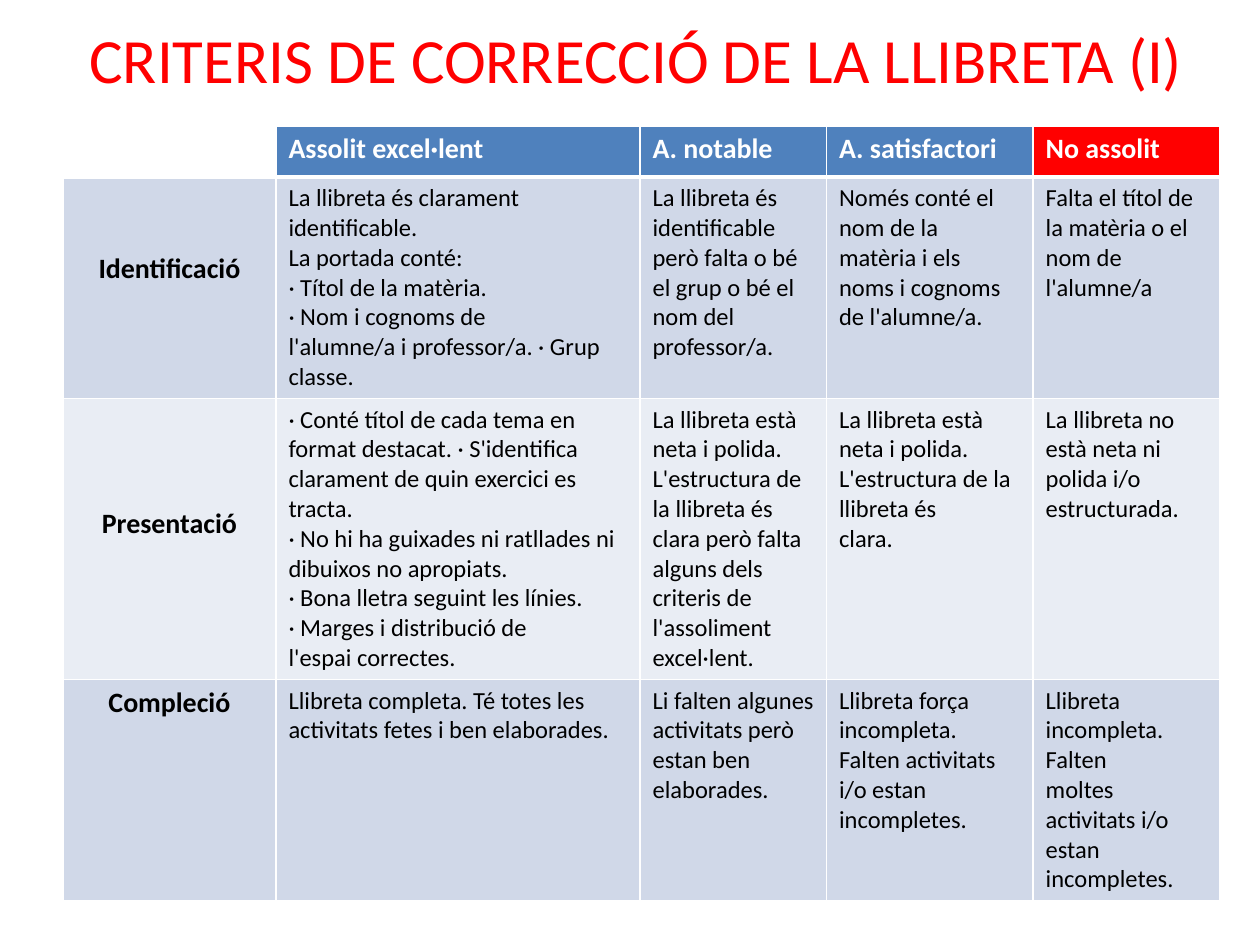
import pptx
import pptx.dml.color
import pptx.enum.text
import pptx.oxml
import pptx.oxml.ns
import pptx.util

Inches = pptx.util.Inches
Pt = pptx.util.Pt
ALIGN = pptx.enum.text.PP_ALIGN
ANCHOR = pptx.enum.text.MSO_ANCHOR

COLS = [1.69, 2.89, 1.48, 1.64, 1.48]
ROWS = [0.37, 1.74, 2.23, 1.75]
LINE = 0.27  # height of one label line
HEADS = ["Assolit excel·lent", "A. notable", "A. satisfactori", "No assolit"]

# Label, lines it is moved down, row fill, one text per level
BODY = [
    ("Identificació", 2, "D0D8E8", [
        "La llibreta és clarament\nidentificable.\nLa portada conté:\n"
        "· Títol de la matèria.\n· Nom i cognoms de\n"
        "l'alumne/a i professor/a. · Grup classe.",
        "La llibreta és identificable però falta o bé el grup o bé el nom del\n"
        "professor/a.",
        "Només conté el nom de la\nmatèria i els noms i cognoms\nde l'alumne/a.",
        "Falta el títol de la matèria o el\nnom de l'alumne/a",
    ]),
    ("Presentació", 3, "E9EDF4", [
        "· Conté títol de cada tema en format destacat. "
        "· S'identifica clarament de quin exercici es tracta.\n"
        "· No hi ha guixades ni ratllades ni dibuixos no apropiats.\n"
        "· Bona lletra seguint les línies.\n"
        "· Marges i distribució de\nl'espai correctes.",
        "La llibreta està neta i polida.\n"
        "L'estructura de la llibreta és clara però falta alguns dels criteris "
        "de l'assoliment\nexcel·lent.",
        "La llibreta està neta i polida.\nL'estructura de la llibreta és\nclara.",
        "La llibreta no està neta ni\npolida i/o estructurada.",
    ]),
    ("Compleció", 0, "D0D8E8", [
        "Llibreta completa. Té totes les activitats fetes i ben elaborades.",
        "Li falten algunes activitats però\nestan ben elaborades.",
        "Llibreta força incompleta.\nFalten activitats i/o estan incompletes.",
        "Llibreta incompleta. Falten\nmoltes activitats i/o estan incompletes.",
    ]),
]


def color(code):
    return pptx.dml.color.RGBColor.from_string(code)


class Deck:
    font = "Calibri"
    red = "FF0000"
    blue = "4F81BD"
    white = "FFFFFF"
    black = "000000"

    def __init__(self):
        self.file = pptx.Presentation()
        self.file.slide_width = Inches(10)
        self.file.slide_height = Inches(7.5)
        self.slide = self.file.slides.add_slide(self.file.slide_layouts[5])

    def text(self, frame, words, size, tint, bold=False, align=ALIGN.LEFT):
        frame.text = words
        style = {"name": self.font, "size": Pt(size), "bold": bold}
        for para in frame.paragraphs:
            para.alignment = align
            for run in para.runs:
                for key, value in style.items():
                    setattr(run.font, key, value)
                run.font.color.rgb = color(tint)

    def title(self, words, left, top, width, height):
        shape = self.slide.shapes.title
        place = {"left": left, "top": top, "width": width, "height": height}
        for key, value in place.items():
            setattr(shape, key, Inches(value))
        shape.text_frame.vertical_anchor = ANCHOR.MIDDLE
        self.text(shape.text_frame, words, 36, self.red, align=ALIGN.CENTER)

    def grid(self, left, top, cols, rows):
        frame = self.slide.shapes.add_table(
            len(rows), len(cols), Inches(left), Inches(top),
            Inches(sum(cols)), Inches(sum(rows)))
        table = frame.table
        for col, width in zip(table.columns, cols):
            col.width = Inches(width)
        for row, height in zip(table.rows, rows):
            row.height = Inches(height)
        return table

    def cell(self, cell, words, fill, size=14, tint=black, base=1, **style):
        if fill:
            cell.fill.solid()
            cell.fill.fore_color.rgb = color(fill)
        else:
            cell.fill.background()
        if words:
            self.text(cell.text_frame, words, size, tint, **style)
        self.edge(cell, base)

    def edge(self, cell, base):
        props = cell._tc.get_or_add_tcPr()
        sides = {"L": 1, "R": 1, "T": 1, "B": base}
        for spot, (side, width) in enumerate(sides.items()):
            props.insert(spot, pptx.oxml.parse_xml(
                f'<a:ln{side} {pptx.oxml.ns.nsdecls("a")} w="{Pt(width)}">'
                f'<a:solidFill><a:srgbClr val="{self.white}"/></a:solidFill>'
                f'</a:ln{side}>'))


def main():
    deck = Deck()
    deck.title("CRITERIS DE CORRECCIÓ DE LA LLIBRETA (I)", 0.55, -0.16, 9, 1.25)
    table = deck.grid(0.5, 1, COLS, ROWS)

    # Header row
    deck.cell(table.cell(0, 0), "", None, base=3)
    for col, head in enumerate(HEADS, 1):
        fill = deck.red if col == len(HEADS) else deck.blue
        deck.cell(table.cell(0, col), head, fill, 16, deck.white, 3, bold=True)

    # One row for each criterion
    for row, (label, drop, fill, texts) in enumerate(BODY, 1):
        name = table.cell(row, 0)
        name.margin_top = Inches(0.05 + drop * LINE)
        deck.cell(name, label, fill, 16, bold=True, align=ALIGN.CENTER)
        for col, words in enumerate(texts, 1):
            deck.cell(table.cell(row, col), words, fill)

    deck.file.save("out.pptx")


if __name__ == "__main__":
    main()
